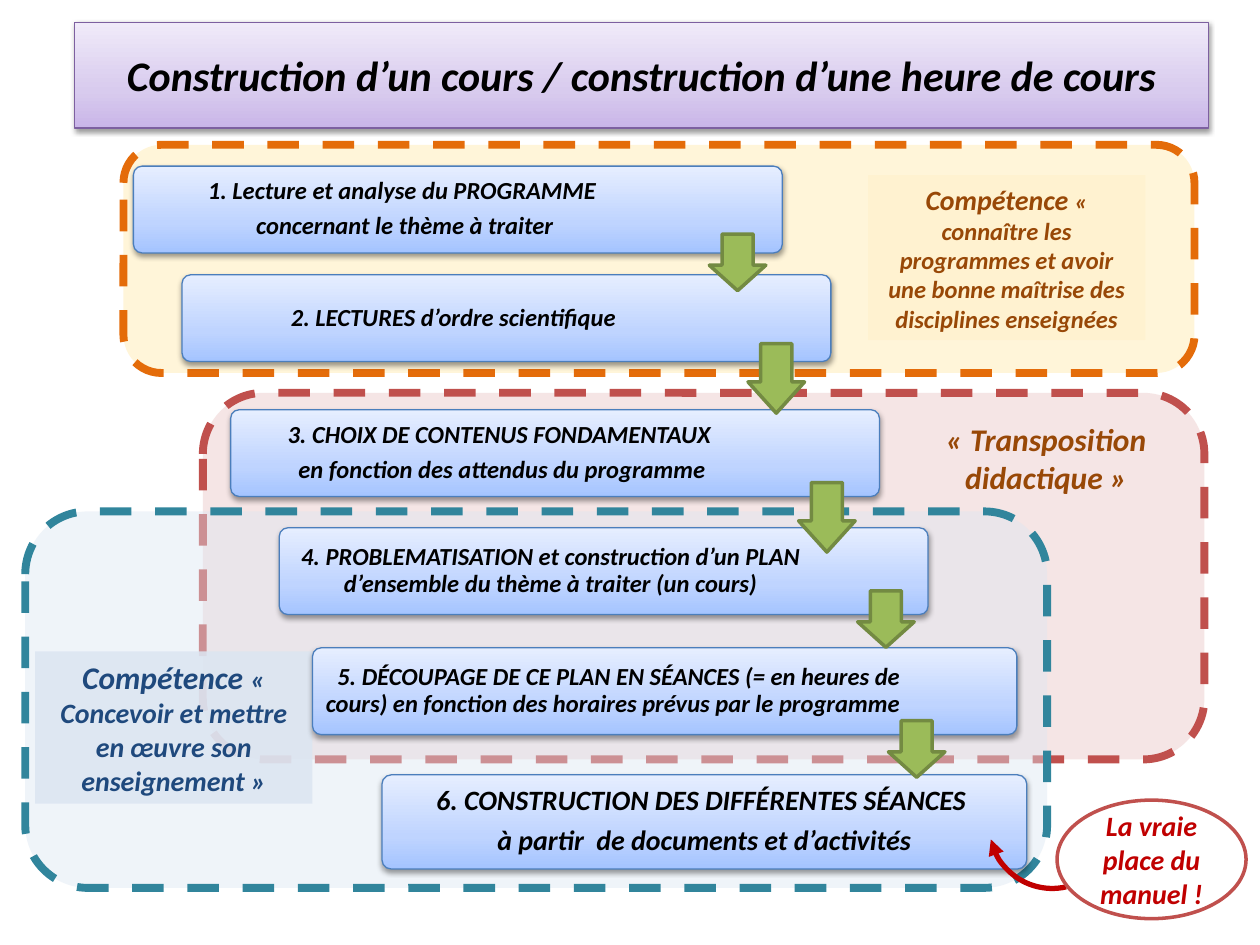
from dataclasses import dataclass

from pptx import Presentation
from pptx.dml.color import RGBColor
from pptx.enum.dml import MSO_LINE
from pptx.enum.shapes import MSO_SHAPE
from pptx.enum.text import MSO_ANCHOR, PP_ALIGN
from pptx.oxml import parse_xml
from pptx.oxml.ns import nsdecls, qn
from pptx.util import Cm, Pt


@dataclass(frozen=True)
class Theme:
    font: str = "Calibri"
    black: str = "000000"
    white: str = "FFFFFF"
    amber: str = "FFC000"
    orange: str = "E46C0A"
    brown: str = "984807"
    pink: str = "E6B9B8"
    red: str = "C0504D"
    dark_red: str = "C00000"
    pale: str = "DCE6F2"
    teal: str = "31859C"
    navy: str = "1F497D"
    green: str = "9BBB59"
    olive: str = "738A42"
    violet: str = "7D60A0"
    blue: str = "4B7EBC"
    lilac: tuple = ("C9B5E8", "D8CBEE", "F0EAF9")
    sky: tuple = ("A4C4FF", "BFD4FF", "E6EEFF")
    title: int = 24
    large: int = 18
    medium: int = 16
    small: int = 14


T = Theme()


def rgb(code):
    return RGBColor.from_string(code)


def paint(shape, color, alpha=100):
    shape.fill.solid()
    shape.fill.fore_color.rgb = rgb(color)
    if alpha < 100:
        tint = shape.fill._xPr.find(".//" + qn("a:srgbClr"))
        tint.append(parse_xml(f'<a:alpha {nsdecls("a")} val="{alpha * 1000}"/>'))


def outline(shape, color, width):
    shape.line.color.rgb = rgb(color)
    shape.line.width = Pt(width)


def gloss(shape, colors, edge):
    """Vertical three-stop gradient, thin edge and soft shadow below."""
    shape.fill.gradient()
    shape.fill.gradient_angle = 90
    stops = shape._element.spPr.find(".//" + qn("a:gsLst"))
    for stop in list(stops):
        stops.remove(stop)
    for pos, color in zip((0, 35, 100), colors):
        stops.append(parse_xml(
            f'<a:gs {nsdecls("a")} pos="{pos * 1000}"><a:srgbClr val="{color}"/></a:gs>'))
    outline(shape, edge, 0.75)
    shape.shadow.inherit = False
    shape._element.spPr.find(qn("a:effectLst")).append(parse_xml(
        f'<a:outerShdw {nsdecls("a")} blurRad="40000" dist="20000" dir="5400000" '
        'rotWithShape="0"><a:srgbClr val="000000"><a:alpha val="38000"/>'
        '</a:srgbClr></a:outerShdw>'))


def add(slide, kind, box):
    shape = slide.shapes.add_shape(kind, *map(Cm, box))
    shape.shadow.inherit = False
    return shape


def style(font, size, color):
    font.name, font.size = T.font, Pt(size)
    font.bold = font.italic = True
    font.color.rgb = rgb(color)


def write(shape, lines, size, color, align=PP_ALIGN.CENTER):
    frame = shape.text_frame
    frame.word_wrap = True
    frame.vertical_anchor = MSO_ANCHOR.MIDDLE
    for i, line in enumerate(lines):
        para = frame.add_paragraph() if i else frame.paragraphs[0]
        para.text = line
        para.alignment = align
        style(para.font, size, color)
    return frame


def heading(slide, box, text):
    shape = slide.shapes.title
    shape.left, shape.top, shape.width, shape.height = map(Cm, box)
    gloss(shape, T.lilac, T.violet)
    write(shape, [text], T.title, T.black)


def panel(slide, box, fill, alpha, edge):
    shape = add(slide, MSO_SHAPE.ROUNDED_RECTANGLE, box)
    paint(shape, fill, alpha)
    outline(shape, edge, 4.5)
    shape.line.dash_style = MSO_LINE.DASH


def note(slide, box, place, text, size, color, fill=None, alpha=100, lead=None):
    """Caption inside a panel; lead is an opening word one step larger."""
    dx, dy, wide, high = place
    area = (box[0] + dx, box[1] + dy, wide, high)
    if fill:
        shape = add(slide, MSO_SHAPE.RECTANGLE, area)
        paint(shape, fill, alpha)
        shape.line.fill.background()
    else:
        shape = slide.shapes.add_textbox(*map(Cm, area))
    para = write(shape, [lead or text], size, color).paragraphs[0]
    if lead:
        para.runs[0].font.size = Pt(size + 2)
        para.add_run().text = text


def step(slide, box, lines, size=T.small, right=2.29, align=PP_ALIGN.CENTER):
    shape = add(slide, MSO_SHAPE.ROUNDED_RECTANGLE, box)
    shape.adjustments[0] = 0.1
    gloss(shape, T.sky, T.blue)
    frame = write(shape, lines, size, T.black, align)
    frame.margin_left = frame.margin_top = frame.margin_bottom = Cm(0.16)
    frame.margin_right = Cm(right)
    for para in frame.paragraphs:
        para.line_spacing = 0.9
        para.space_after = Pt(0.35 * size)


def arrow(slide, box, back, up, high):
    """Down arrow set back from the step's right edge, up from its foot."""
    wide = 1.14
    left, top = box[0] + box[2] - back, box[1] + box[3] - up
    shape = add(slide, MSO_SHAPE.DOWN_ARROW, (left, top, wide, high))
    shape.adjustments[0] = 0.55
    shape.adjustments[1] = 0.45 * high / wide
    paint(shape, T.green)
    outline(shape, T.olive, 2)


def callout(slide, box, text):
    arc = add(slide, MSO_SHAPE.ARC, (box[0] - 1.37, box[1] - 0.76, 2.54, 2.54))
    arc.rotation = 167.2
    arc.fill.background()
    outline(arc, T.dark_red, 3)
    arc.line._get_or_add_ln().append(
        parse_xml(f'<a:tailEnd {nsdecls("a")} type="triangle"/>'))
    oval = add(slide, MSO_SHAPE.OVAL, box)
    paint(oval, T.white)
    outline(oval, T.red, 2)
    write(oval, [text], T.medium, T.dark_red)


def main():
    deck = Presentation()
    deck.slide_width, deck.slide_height = Cm(25.4), Cm(19.05)
    slide = deck.slides.add_slide(deck.slide_layouts[5])
    heading(slide, (1.5, 0.45, 22.86, 2.13),
            "Construction d’un cours / construction d’une heure de cours")

    # Dashed panels and their captions
    know = (2.49, 2.92, 21.59, 4.6)
    panel(slide, know, T.amber, 15, T.orange)
    note(slide, know, (15.01, 0.61, 5.59, 3.33),
         "« connaître les programmes et avoir une bonne maîtrise des disciplines enseignées",
         T.small, T.brown, T.amber, 4, "Compétence ")
    adapt = (4.09, 7.92, 20.19, 7.39)
    panel(slide, adapt, T.pink, 36, T.red)
    note(slide, adapt, (14.6, 0.41, 4.8, 1.8), "« Transposition didactique »",
         T.large, T.brown)
    teach = (0.51, 10.31, 20.6, 7.59)
    panel(slide, teach, T.pale, 43, T.teal)
    note(slide, teach, (0.2, 2.82, 5.59, 3.07),
         "« Concevoir et mettre en œuvre son enseignement »",
         T.medium, T.navy, T.pale, 87, "Compétence ")

    # Staircase of steps
    tops = (3.35, 5.54, 8.26, 10.64)
    boxes = [(2.69 + 0.98 * i, top, 13.08, 1.75) for i, top in enumerate(tops)]
    texts = (
        ["1. Lecture et analyse du PROGRAMME ", "concernant le thème à traiter"],
        ["2. LECTURES d’ordre scientifique"],
        ["3. CHOIX DE CONTENUS FONDAMENTAUX ", "en fonction des attendus du programme"],
        ["4. PROBLEMATISATION et construction d’un PLAN d’ensemble du thème à traiter (un cours)"],
    )
    for box, lines in zip(boxes, texts):
        step(slide, box, lines)
    boxes.append((6.3, 13.06, 14.2, 1.75))
    step(slide, boxes[-1], ["5. DÉCOUPAGE DE CE PLAN EN SÉANCES (= en heures de cours) "
                            "en fonction des horaires prévus par le programme"],
         align=PP_ALIGN.RIGHT)
    step(slide, (7.7, 15.62, 13, 1.9),
         ["6. CONSTRUCTION DES DIFFÉRENTES SÉANCES ",
          "à partir  de documents et d’activités"], T.medium, 0.16)

    # Arrows from each step to the next
    spots = ((1.47, 0.38, 1.14), (1.67, 0.36, 1.4), (1.63, 0.28, 1.4),
             (1.42, 0.48, 1.14), (2.59, 0.28, 1.14))
    for box, spot in zip(boxes, spots):
        arrow(slide, box, *spot)

    callout(slide, (21.31, 16.13, 3.81, 2.39), "La vraie place du manuel !")
    deck.save("out.pptx")


if __name__ == "__main__":
    main()
